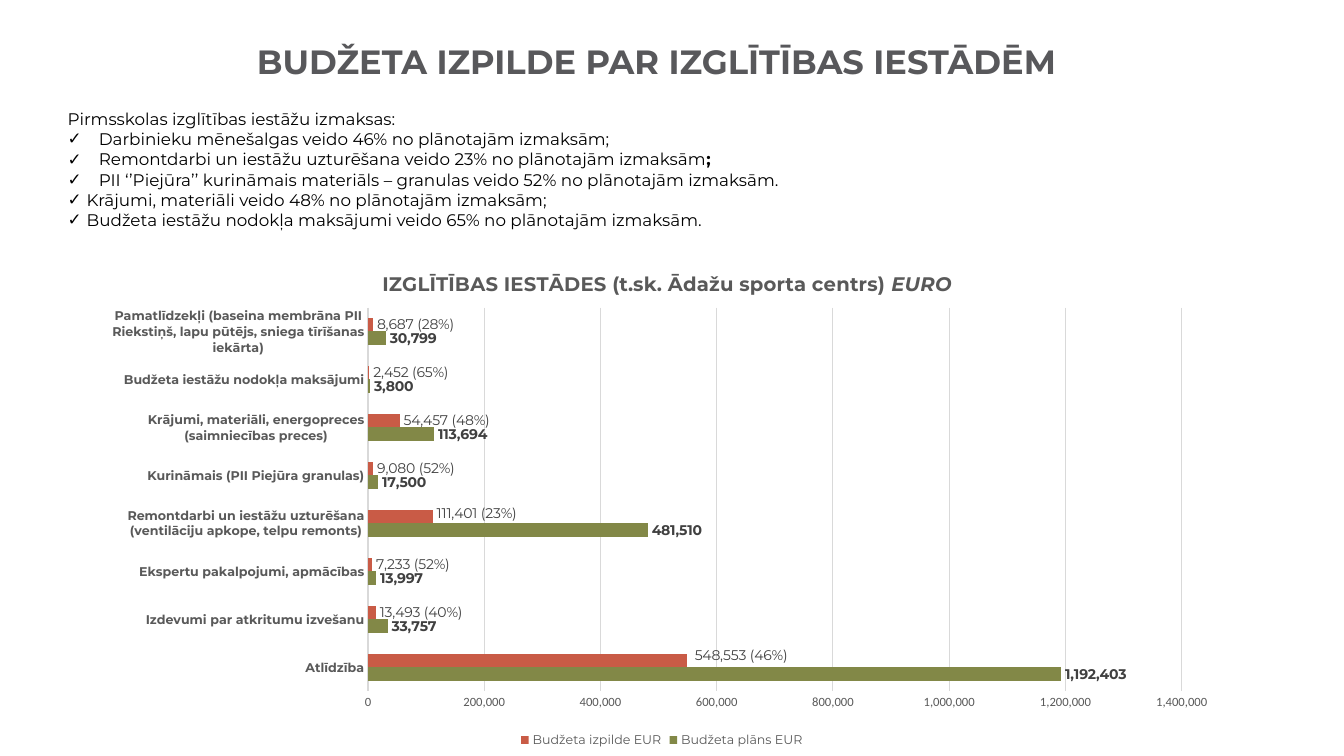
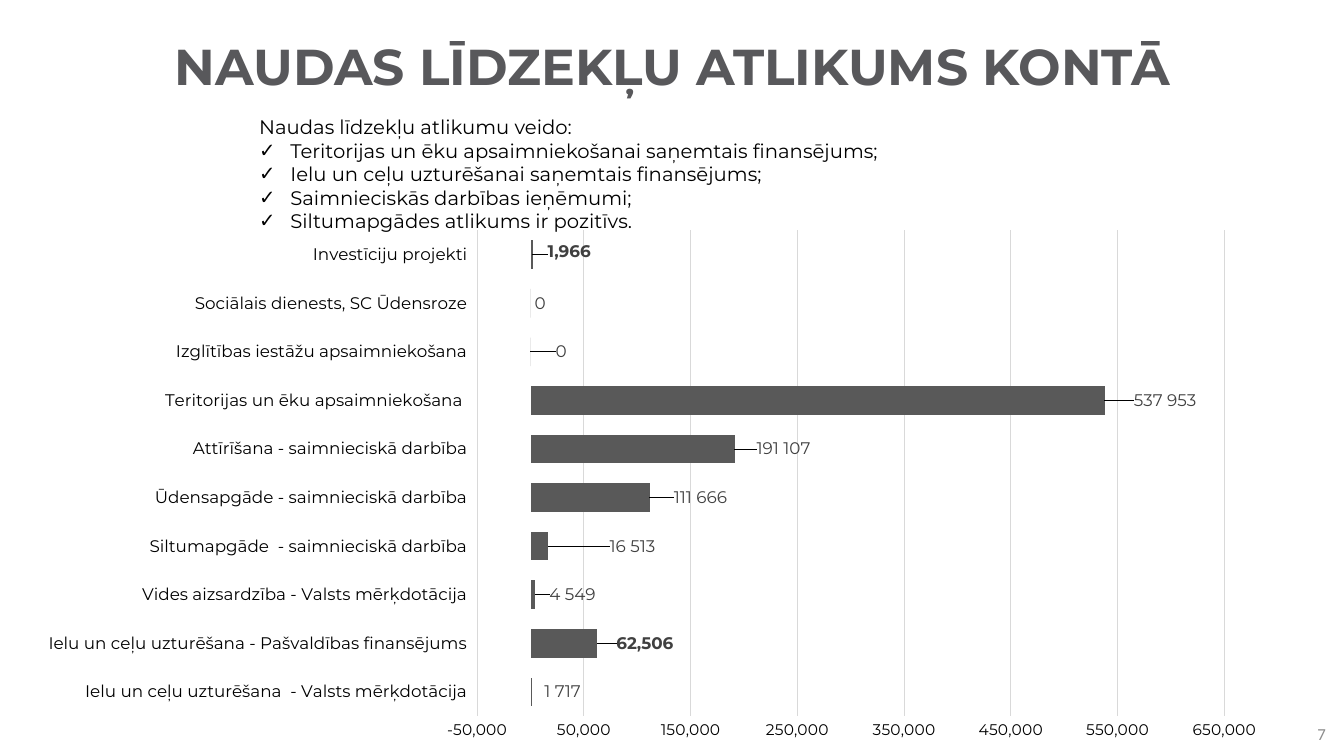
import pptx
import pptx.util
import pptx.chart.data
import pptx.dml.color
import pptx.enum.chart
import pptx.enum.text
import pptx.oxml
import pptx.oxml.ns
import lxml.etree

Inches = pptx.util.Inches
Pt = pptx.util.Pt
qn = pptx.oxml.ns.qn
PP = pptx.enum.text.PP_ALIGN
XL = pptx.enum.chart

INK = {
    "title": "58585B",
    "text": "000000",
    "axis": "595959",
    "label": "404040",
    "grid": "D9D9D9",
    "page": "8C8C8C",
    "plan": "828847",
    "spent": "C95B46",
    "cash": "595959",
}
FACE = "Montserrat"
PLAIN = "Calibri"
COMMA = "#,##0"


def style(font, size, ink, bold=False, face=FACE):
    """Set size, colour, weight and face of a font."""
    font.size = Pt(size)
    font.name = face
    font.bold = bold
    font.color.rgb = pptx.dml.color.RGBColor.from_string(INK[ink])


def place(shape, box):
    """Move a shape to a box given in inches."""
    shape.left, shape.top, shape.width, shape.height = map(Inches, box)


def add_page(deck, box, text, size):
    """Add a slide with its title in the given box."""
    page = deck.slides.add_slide(deck.slide_layouts[1])
    place(page.shapes.title, box)
    frame = page.shapes.title.text_frame
    frame.vertical_anchor = pptx.enum.text.MSO_ANCHOR.MIDDLE
    frame.auto_size = pptx.enum.text.MSO_AUTO_SIZE.NONE
    line = frame.paragraphs[0]
    line.text = text
    line.alignment = PP.CENTER
    line.line_spacing = 0.9
    style(line.font, size, "title", True)
    return page


def fill_list(page, box, rows, size):
    """Fill the body with rows of text, bold tail and bullet indent."""
    body = page.placeholders[1]
    place(body, box)
    frame = body.text_frame
    frame.word_wrap = True
    frame.auto_size = pptx.enum.text.MSO_AUTO_SIZE.SHAPE_TO_FIT_TEXT
    for num, (text, tail, dent) in enumerate(rows):
        line = frame.add_paragraph() if num else frame.paragraphs[0]
        line.add_run().text = text
        line.alignment = PP.JUSTIFY
        line.space_before = line.space_after = Pt(0)
        line.line_spacing = 1.0
        props = line._p.get_or_add_pPr()
        props.set("marL", str(Inches(dent)))
        props.set("indent", str(-Inches(dent)))
        if dent:
            lxml.etree.SubElement(props, qn("a:buChar")).set("char", "✓")
        else:
            lxml.etree.SubElement(props, qn("a:buNone"))
        style(line.font, size, "text")
        if tail:
            run = line.add_run()
            run.text = tail
            run.font.bold = True


def set_layout(node, index, inner=False, **parts):
    """Give a chart part a manual layout in fractions of the chart."""
    for old in node.findall(qn("c:layout")):
        node.remove(old)
    layout = lxml.etree.Element(qn("c:layout"))
    manual = lxml.etree.SubElement(layout, qn("c:manualLayout"))
    marks = []
    if inner:
        marks.append(("layoutTarget", "inner"))
    if index != 1 or node.tag == qn("c:title"):
        marks += [("xMode", "edge"), ("yMode", "edge")]
    for name, value in marks + list(parts.items()):
        lxml.etree.SubElement(manual, qn("c:" + name)).set("val", str(value))
    node.insert(index, layout)


def style_axis(axis, size, ink, bold=False, face=FACE):
    """Set an axis without line or ticks."""
    axis.major_tick_mark = axis.minor_tick_mark = XL.XL_TICK_MARK.NONE
    axis.format.line.fill.background()
    style(axis.tick_labels.font, size, ink, bold, face)


def add_bars(page, box, cats, series, gap, plot, scale):
    """Add a clustered bar chart with a light grid."""
    data = pptx.chart.data.CategoryChartData(number_format=COMMA)
    data.categories = cats
    for name, values, ink in series:
        data.add_series(name, values)
    chart = page.shapes.add_chart(
        XL.XL_CHART_TYPE.BAR_CLUSTERED, *map(Inches, box), data).chart
    style(chart.font, 10, "text", face=PLAIN)
    chart.has_title = chart.has_legend = False
    back = lxml.etree.Element(qn("c:spPr"))
    lxml.etree.SubElement(back, qn("a:noFill"))
    line = lxml.etree.SubElement(back, qn("a:ln"))
    lxml.etree.SubElement(line, qn("a:noFill"))
    chart.element.find(qn("c:chart")).addnext(back)

    bars = chart.plots[0]
    bars.gap_width = gap
    bars.vary_by_categories = False
    for bar, (name, values, ink) in zip(bars.series, series):
        bar.format.fill.solid()
        bar.format.fill.fore_color.rgb = (
            pptx.dml.color.RGBColor.from_string(INK[ink]))
        bar.invert_if_negative = False

    axis = chart.value_axis
    axis.minimum_scale, axis.maximum_scale, axis.major_unit = scale
    axis.tick_labels.number_format = COMMA
    axis.tick_labels.number_format_is_linked = False
    axis.has_major_gridlines = True
    grid = axis.major_gridlines.format.line
    grid.width = Pt(0.75)
    grid.color.rgb = pptx.dml.color.RGBColor.from_string(INK["grid"])
    set_layout(chart.element.xpath(".//c:plotArea")[0], 0, True,
               **dict(zip("xywh", plot)))
    return chart


def show_values(bar, size):
    """Show bold values at the ends of the bars."""
    labels = bar.data_labels
    labels.show_value = True
    labels.number_format = COMMA
    labels.number_format_is_linked = False
    labels.position = XL.XL_LABEL_POSITION.OUTSIDE_END
    style(labels.font, size, "label", True)


def set_notes(chart, bar, size, box, notes):
    """Set each point label's own text, if any, and shift in inches."""
    for num, (text, right, down) in enumerate(notes):
        label = bar.points[num].data_label
        if text:
            run = label.text_frame.paragraphs[0].add_run()
            run.text = text
            style(run.font, size, "label")
        else:
            style(label.font, size, "label", True)
        label.position = XL.XL_LABEL_POSITION.OUTSIDE_END
        if right or down:
            node = chart.element.xpath(f".//c:dLbl[c:idx/@val='{num}']")[0]
            set_layout(node, 1, x=right / box[2], y=down / box[3])


def add_schools(deck):
    """Build the slide on spending by schools."""
    page = add_page(deck, (0.61, 0.4, 11.8, 0.47),
                    "BUDŽETA IZPILDE PAR IZGLĪTĪBAS IESTĀDĒM", 24)
    fill_list(page, (0.57, 1.03, 11.35, 1.31), [
        ("Pirmsskolas izglītības iestāžu izmaksas:", "", 0),
        ("Darbinieku mēnešalgas veido 46% no plānotajām izmaksām;", "", 0.31),
        ("Remontdarbi un iestāžu uzturēšana veido 23% no plānotajām izmaksām",
         ";", 0.31),
        ("PII ‘’Piejūra’’ kurināmais materiāls – granulas veido 52% "
         "no plānotajām izmaksām.", "", 0.31),
        ("Krājumi, materiāli veido 48% no plānotajām izmaksām;", "", 0.19),
        ("Budžeta iestāžu nodokļa maksājumi veido 65% "
         "no plānotajām izmaksām.", "", 0.19),
    ], 12)
    rows = [
        ("Atlīdzība", 1192403, 548553, 46),
        ("Izdevumi par atkritumu izvešanu", 33757, 13493, 40),
        ("Ekspertu pakalpojumi, apmācības", 13997, 7233, 52),
        ("Remontdarbi un iestāžu uzturēšana "
         "(ventilāciju apkope, telpu remonts)", 481510, 111401, 23),
        ("Kurināmais (PII Piejūra granulas)", 17500, 9080, 52),
        ("Krājumi, materiāli, energopreces (saimniecības preces)",
         113694, 54457, 48),
        ("Budžeta iestāžu nodokļa maksājumi", 3800, 2452, 65),
        ("Pamatlīdzekļi (baseina membrāna PII Riekstiņš, lapu pūtējs, "
         "sniega tīrīšanas iekārta)", 30799, 8687, 28),
    ]
    cats, plan, spent, share = zip(*rows)
    box = (0.96, 2.45, 11.21, 5.01)
    chart = add_bars(page, box, cats, [
        ("Budžeta plāns EUR", plan, "plan"),
        ("Budžeta izpilde EUR", spent, "spent"),
    ], 150, (0.24, 0.12, 0.72, 0.76), (0, 1400000, 200000))
    style_axis(chart.category_axis, 9, "axis", True)
    style_axis(chart.value_axis, 9, "axis", face=PLAIN)

    chart.has_title = True
    line = chart.chart_title.text_frame.paragraphs[0]
    for text, slant in (("IZGLĪTĪBAS IESTĀDES (t.sk. Ādažu sporta centrs) ",
                         False), ("EURO", True)):
        run = line.add_run()
        run.text = text
        style(run.font, 14, "axis", True)
        run.font.italic = slant
    set_layout(chart.element.xpath("./c:chart/c:title")[0], 1, x=0.25, y=0.04)

    chart.has_legend = True
    chart.legend.position = XL.XL_LEGEND_POSITION.BOTTOM
    chart.legend.include_in_layout = False
    style(chart.legend.font, 9, "axis")

    bars = chart.plots[0].series
    for bar in bars:
        show_values(bar, 10)
    moves = {0: (0.04, -0.05), 3: (0, -0.03)}
    set_notes(chart, bars[1], 10, box, [
        (f"{value:,} ({part}%)", *moves.get(num, (0, 0)))
        for num, (value, part) in enumerate(zip(spent, share))])


def add_cash(deck):
    """Build the slide on the cash balance."""
    page = add_page(deck, (0.93, 0.22, 11.48, 0.93),
                    "NAUDAS LĪDZEKĻU ATLIKUMS KONTĀ", 36)
    fill_list(page, (2.47, 1.09, 11.5, 1.28), [
        ("Naudas līdzekļu atlikumu veido:", "", 0),
        ("Teritorijas un ēku apsaimniekošanai saņemtais finansējums;",
         "", 0.31),
        ("Ielu un ceļu uzturēšanai saņemtais finansējums;", "", 0.31),
        ("Saimnieciskās darbības ieņēmumi;", "", 0.31),
        ("Siltumapgādes atlikums ir pozitīvs.", "", 0.31),
    ], 14)
    rows = [
        ("Ielu un ceļu uzturēšana  - Valsts mērķdotācija",
         1717, "1 717", 0.08, 0),
        ("Ielu un ceļu uzturēšana - Pašvaldības finansējums",
         62506, "", 0.15, 0),
        ("Vides aizsardzība - Valsts mērķdotācija", 4549, "4 549", 0.1, 0),
        ("Siltumapgāde  - saimnieciskā darbība", 16513, "16 513", 0.57, 0),
        ("Ūdensapgāde - saimnieciskā darbība", 111666, "111 666", 0.2, 0),
        ("Attīrīšana - saimnieciskā darbība", 191107, "191 107", 0.18, 0),
        ("Teritorijas un ēku apsaimniekošana ", 537953, "537 953", 0.25, 0),
        ("Izglītības iestāžu apsaimniekošana", 0, "0", 0.21, 0),
        ("Sociālais dienests, SC Ūdensroze", 0, "0", 0, 0),
        ("Investīciju projekti", 1966, "", 0.11, -0.03),
    ]
    box = (0.4, 1.9, 12.56, 5.51)
    chart = add_bars(page, box, [row[0] for row in rows],
                     [("Series 1", [row[1] for row in rows], "cash")],
                     70, (0.345, 0.07, 0.59, 0.875), (-50000, 650000, 100000))
    style_axis(chart.category_axis, 12, "text")
    style_axis(chart.value_axis, 11, "text")
    chart.category_axis.tick_label_position = XL.XL_TICK_LABEL_POSITION.LOW
    bar = chart.plots[0].series[0]
    show_values(bar, 12)
    set_notes(chart, bar, 12, box, [row[2:] for row in rows])
    add_number(page, (10.25, 7.08, 3, 0.4), "7")


def add_number(page, box, text):
    """Add the page number at the right of its box."""
    frame = page.shapes.add_textbox(*map(Inches, box)).text_frame
    frame.word_wrap = True
    frame.vertical_anchor = pptx.enum.text.MSO_ANCHOR.MIDDLE
    line = frame.paragraphs[0]
    line.text = text
    line.alignment = PP.RIGHT
    style(line.font, 12, "page", face=PLAIN)


def main():
    """Build and save the deck."""
    deck = pptx.Presentation()
    deck.slide_width, deck.slide_height = Inches(13.33), Inches(7.5)
    add_schools(deck)
    add_cash(deck)
    deck.save("out.pptx")


if __name__ == "__main__":
    main()
